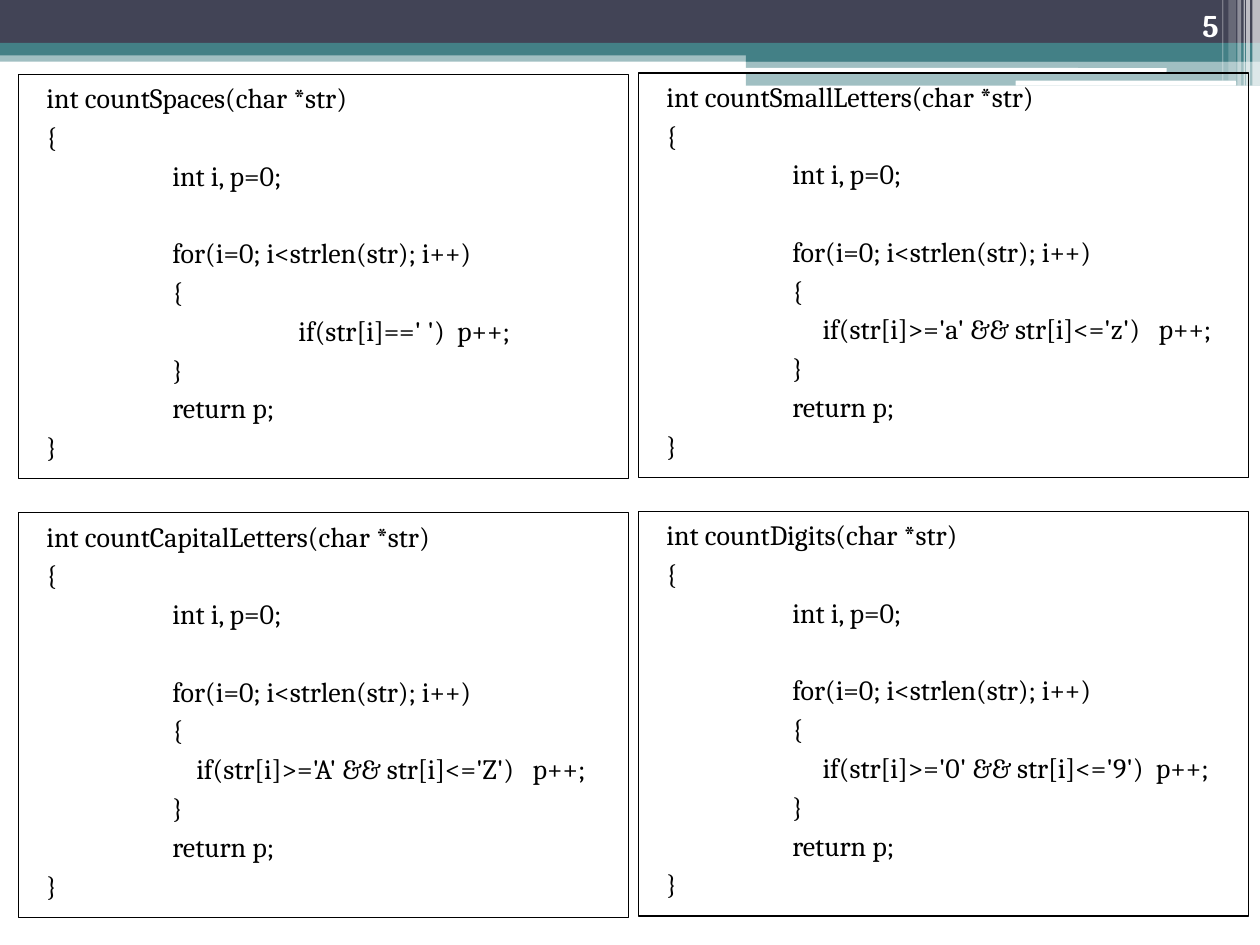
from lxml import etree
from pptx import Presentation
from pptx import util as u
from pptx.dml.color import RGBColor
from pptx.enum import shapes, text as t
from pptx.oxml import ns

COLORS = {"navy": "424456", "teal": "438086", "white": "FFFFFF", "black": "000000"}
FONT = "Cambria"
BANDS = [
    (0, 0.4, 10, 0.09, "teal", 50),
    (0, 0, 10, 0.34, "navy", 100),
    (0, 0.34, 10, 0.1, "teal", 100),
    (5.92, 0.39, 4.08, 0.1, "teal", 100),
    (5.92, 0.48, 4.08, 0.2, "teal", 50),
]
GAPS = [(5.91, 0.54, 3.35, 0.03), (8.06, 0.64, 1.75, 0.04)]
STRIPES = [
    (9.94, 0.06, 0.68, 65),
    (9.89, 0.03, 0.68, 65),
    (9.87, 0.01, 0.68, 60),
    (9.82, 0.03, 0.68, 40),
    (9.75, 0.06, 0.64, 20),
    (9.7, 0.01, 0.64, 30),
]
LEFT, RIGHT = 0.15, 5.07
PANEL_SIZE = (4.84, 3.21)
FUNCTIONS = [
    (LEFT, 0.59, "countSpaces", "if(str[i]==' ')  p++;", 2.12),
    (LEFT, 4.07, "countCapitalLetters", "if(str[i]>='A' && str[i]<='Z')   p++;", 1.31),
    (RIGHT, 0.58, "countSmallLetters", "if(str[i]>='a' && str[i]<='z')   p++;", 1.36),
    (RIGHT, 4.06, "countDigits", "if(str[i]>='0' && str[i]<='9')  p++;", 1.36),
]
OUTER, INNER = 0.12, 1.12
LINE_GAP, SECTION_GAP = 3, 25


def color(name):
    """Return the named colour."""
    return RGBColor.from_string(COLORS[name])


def add_block(page, box, fill, opacity=100, kind=shapes.MSO_SHAPE.RECTANGLE):
    """Add a borderless filled block with the given opacity in percent."""
    block = page.shapes.add_shape(kind, *map(u.Inches, box))
    block.shadow.inherit = False
    block.fill.solid()
    block.fill.fore_color.rgb = color(fill)
    block.line.fill.background()
    if opacity < 100:
        tint = block.fill._xPr.find(".//" + ns.qn("a:srgbClr"))
        etree.SubElement(tint, ns.qn("a:alpha"), val=str(opacity * 1000))
    return block


def write(para, text, size=16, fill="black", bold=False, indent=0,
          before=0, align=t.PP_ALIGN.LEFT):
    """Write one formatted line into a paragraph."""
    para.alignment = align
    para.space_before = u.Pt(before)
    para._p.get_or_add_pPr().set("marL", str(u.Inches(indent)))
    span = para.add_run()
    span.text = text
    span.font.name = FONT
    span.font.size = u.Pt(size)
    span.font.bold = bold
    span.font.color.rgb = color(fill)


def add_banner(page):
    """Draw the header bands, their white gaps and the fading stripes."""
    for *box, fill, opacity in BANDS:
        add_block(page, box, fill, opacity)
    for box in GAPS:
        add_block(page, box, "white", kind=shapes.MSO_SHAPE.ROUNDED_RECTANGLE)
    for left, width, height, opacity in STRIPES:
        add_block(page, (left, 0, width, height), "white", opacity)


def add_page_number(page, box, number):
    """Place the page number at the bottom right of its box."""
    frame = page.shapes.add_textbox(*map(u.Inches, box)).text_frame
    frame.word_wrap = True
    frame.vertical_anchor = t.MSO_ANCHOR.BOTTOM
    write(frame.paragraphs[0], number, size=18, fill="white", bold=True,
          align=t.PP_ALIGN.RIGHT)


def add_code_panel(page, box, name, condition, condition_indent):
    """Place a bordered panel holding one counting function."""
    panel = page.shapes.add_textbox(*map(u.Inches, box))
    panel.line.color.rgb = color("black")
    panel.line.width = u.Pt(0.75)
    frame = panel.text_frame
    frame.word_wrap = True
    lines = [
        (f"int {name}(char *str)", OUTER, LINE_GAP),
        ("{", OUTER, LINE_GAP),
        ("int i, p=0;", INNER, LINE_GAP),
        ("for(i=0; i<strlen(str); i++)", INNER, SECTION_GAP),
        ("{", INNER, LINE_GAP),
        (condition, condition_indent, LINE_GAP),
        ("}", INNER, LINE_GAP),
        ("return p;", INNER, LINE_GAP),
        ("}", OUTER, LINE_GAP),
    ]
    for index, (text, indent, before) in enumerate(lines):
        para = frame.add_paragraph() if index else frame.paragraphs[0]
        write(para, text, indent=indent, before=before)


def main():
    """Build the slide and save it."""
    deck = Presentation()
    deck.slide_width, deck.slide_height = u.Inches(10), u.Inches(7.5)
    page = deck.slides.add_slide(deck.slide_layouts[6])
    add_banner(page)
    add_page_number(page, (8.94, 0, 0.83, 0.4), "5")
    for left, top, name, condition, indent in FUNCTIONS:
        add_code_panel(page, (left, top, *PANEL_SIZE), name, condition, indent)
    deck.save("out.pptx")


if __name__ == "__main__":
    main()
